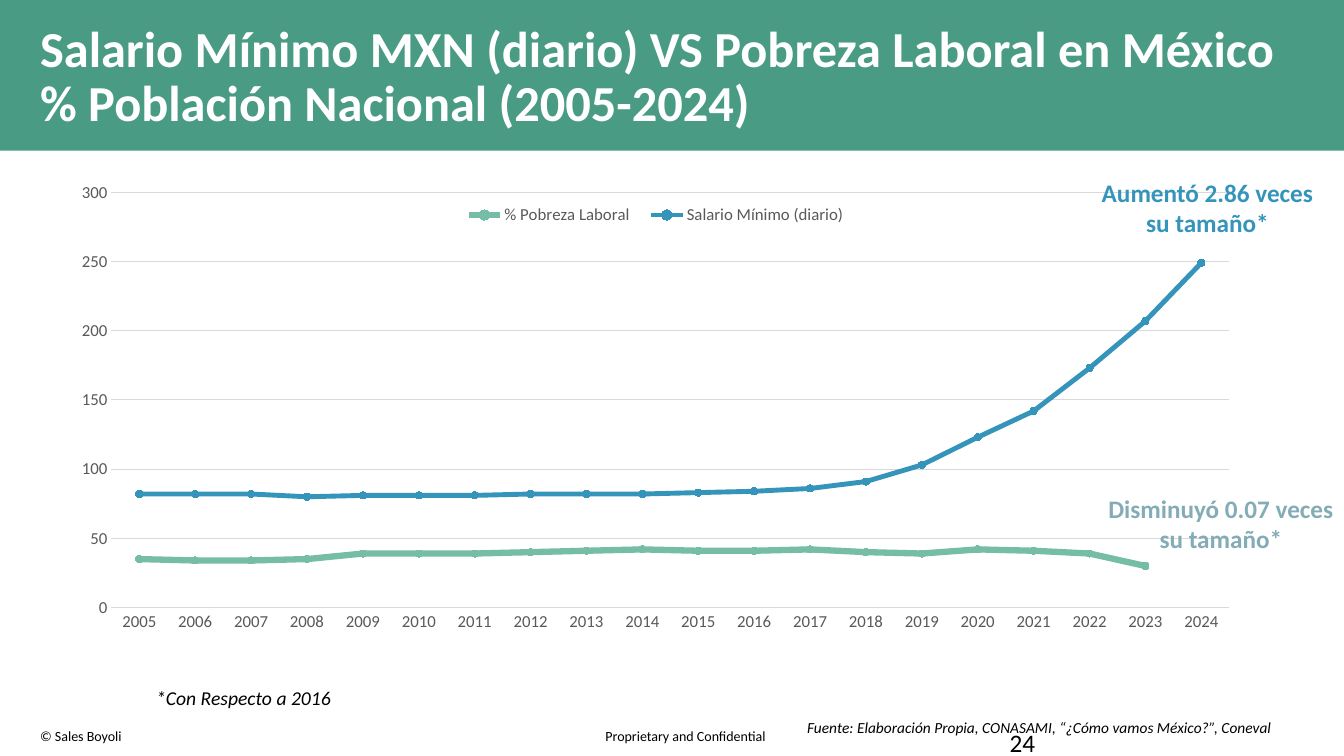
from dataclasses import dataclass, field

from lxml import etree
from pptx import Presentation
from pptx import util as u
from pptx.chart.data import CategoryChartData
from pptx.dml.color import RGBColor
from pptx.enum import chart as charts, shapes, text
from pptx.oxml import ns

FONT = "Calibri"
BLACK = RGBColor(0, 0, 0)
WHITE = RGBColor(0xFF, 0xFF, 0xFF)
GREEN = RGBColor(0x4A, 0x9B, 0x83)
BLUE = RGBColor(0x34, 0x94, 0xBA)
MINT = RGBColor(0x75, 0xBD, 0xA7)
TEAL = RGBColor(0x58, 0xB6, 0xC0)
STEEL = RGBColor(0x84, 0xAC, 0xB6)
GRAY = RGBColor(0x59, 0x59, 0x59)
PALE = RGBColor(0xD9, 0xD9, 0xD9)

WIDTH, HEIGHT = u.Inches(13.33), u.Inches(7.5)
COLUMNS, ROWS = 160, 90


@dataclass(frozen=True)
class Area:
    column: float
    row: float
    columns: float
    rows: float

    def box(self) -> tuple[int, int, int, int]:
        across, down = WIDTH / COLUMNS, HEIGHT / ROWS
        return (round(self.column * across), round(self.row * down),
                round(self.columns * across), round(self.rows * down))


@dataclass(frozen=True)
class Label:
    words: str
    area: Area
    style: dict = field(default_factory=dict)


@dataclass(frozen=True)
class Trend:
    name: str
    values: list
    color: RGBColor
    marker: RGBColor
    width: float
    order: int


LABELS = [
    Label("Proprietary and Confidential", Area(70.9, 86, 21.7, 3.2), dict(size=10, wrap=False)),
    Label("© Sales Boyoli", Area(3.6, 86, 40.4, 3.2), dict(size=10)),
    Label("24", Area(119, 86, 37.3, 3), dict(size=18)),
    Label("Salario Mínimo MXN (diario) VS Pobreza Laboral en México "
          "% Población Nacional (2005-2024)", Area(3.6, 1.7, 152.6, 15.2),
          dict(size=36, color=WHITE, bold=True, spacing=0.9, anchor=text.MSO_ANCHOR.MIDDLE)),
    Label("Aumentó 2.86 veces su tamaño*", Area(129.1, 20.5, 29.3, 8.5),
          dict(size=18, color=BLUE, bold=True, align=text.PP_ALIGN.CENTER)),
    Label("Disminuyó 0.07 veces su tamaño*", Area(130.7, 58.1, 29.3, 8.5),
          dict(size=18, color=STEEL, bold=True, align=text.PP_ALIGN.CENTER)),
    Label("*Con Respecto a 2016", Area(17.4, 81.1, 35.2, 4.1), dict(size=14, italic=True)),
    Label("Fuente: Elaboración Propia, CONASAMI, “¿Cómo vamos México?”, Coneval",
          Area(94.9, 84.9, 58.9, 3.5), dict(size=11, italic=True)),
]
TRENDS = [
    Trend("% Pobreza Laboral",
          [35, 34, 34, 35, 39, 39, 39, 40, 41, 42, 41, 41, 42, 40, 39, 42, 41, 39, 30, None],
          MINT, TEAL, 4.5, 1),
    Trend("Salario Mínimo (diario)",
          [82, 82, 82, 80, 81, 81, 81, 82, 82, 82, 83, 84, 86, 91, 103, 123, 142, 173, 207, 249],
          BLUE, BLUE, 3.5, 0),
]


def add_text(page, words: str, area: Area, *, size: float, color: RGBColor = BLACK,
             bold: bool = False, italic: bool = False, align=text.PP_ALIGN.LEFT,
             anchor=text.MSO_ANCHOR.TOP, spacing: float = 1, wrap: bool = True) -> None:
    frame = page.shapes.add_textbox(*area.box()).text_frame
    frame.word_wrap = wrap
    frame.vertical_anchor = anchor
    para = frame.paragraphs[0]
    para.alignment = align
    para.line_spacing = spacing
    span = para.add_run()
    span.text = words
    set_font(span.font, size, color)
    span.font.bold = bold
    span.font.italic = italic


def set_font(font, size: float, color: RGBColor) -> None:
    font.name = FONT
    font.size = u.Pt(size)
    font.color.rgb = color


def add_band(page, area: Area) -> None:
    band = page.shapes.add_shape(shapes.MSO_SHAPE.RECTANGLE, *area.box())
    band.shadow.inherit = False
    band.fill.solid()
    band.fill.fore_color.rgb = GREEN
    band.line.fill.background()


def set_layout(parent, index: int, inner: bool, **shares: float) -> None:
    for old in parent.findall(ns.qn("c:layout")):
        parent.remove(old)
    layout = etree.Element(ns.qn("c:layout"))
    manual = etree.SubElement(layout, ns.qn("c:manualLayout"))
    settings = {"layoutTarget": "inner"} if inner else {}
    settings |= {"xMode": "edge", "yMode": "edge"} | shares
    for tag, value in settings.items():
        etree.SubElement(manual, ns.qn(f"c:{tag}")).set("val", str(value))
    parent.insert(index, layout)


def style_line(line, color: RGBColor, width: float) -> None:
    line.color.rgb = color
    line.width = u.Pt(width)


def add_trends(page, area: Area) -> None:
    data = CategoryChartData()
    data.categories = [str(year) for year in range(2005, 2025)]
    for trend in TRENDS:
        data.add_series(trend.name, trend.values)
    chart = page.shapes.add_chart(charts.XL_CHART_TYPE.LINE_MARKERS, *area.box(), data).chart
    set_font(chart.font, 10, BLACK)
    chart.has_title = False

    chart.has_legend = True
    legend = chart.legend
    legend.position = charts.XL_LEGEND_POSITION.BOTTOM
    legend.include_in_layout = False
    set_font(legend.font, 12, GRAY)
    plot_area = chart.plots[0]._element.getparent()
    set_layout(plot_area, 0, True, x=0.044, y=0.04, w=0.936, h=0.824)
    set_layout(legend._element, 1, False, x=0.33, y=0.05, w=0.34, h=0.07)

    for axis in (chart.category_axis, chart.value_axis):
        axis.major_tick_mark = axis.minor_tick_mark = charts.XL_TICK_MARK.NONE
        set_font(axis.tick_labels.font, 12, GRAY)
    style_line(chart.category_axis.format.line, PALE, 0.75)
    values = chart.value_axis
    values.minimum_scale, values.maximum_scale, values.major_unit = 0, 300, 50
    values.format.line.fill.background()
    values.has_major_gridlines = True
    style_line(values.major_gridlines.format.line, PALE, 0.75)

    chart.plots[0].vary_by_categories = False
    for series, trend in zip(list(chart.plots[0].series), TRENDS):
        series.smooth = False
        style_line(series.format.line, trend.color, trend.width)
        marker = series.marker
        marker.style = charts.XL_MARKER_STYLE.CIRCLE
        marker.size = 5
        marker.format.fill.solid()
        marker.format.fill.fore_color.rgb = trend.marker
        style_line(marker.format.line, trend.marker, 0.75)
        series._element.find(ns.qn("c:order")).set("val", str(trend.order))


def main() -> None:
    deck = Presentation()
    deck.slide_width, deck.slide_height = WIDTH, HEIGHT
    page = deck.slides.add_slide(deck.slide_layouts[6])
    add_band(page, Area(0, 0, COLUMNS, 17.94))
    add_trends(page, Area(7, 20.5, 142.2, 60))
    for label in LABELS:
        add_text(page, label.words, label.area, **label.style)
    deck.save("out.pptx")


if __name__ == "__main__":
    main()
